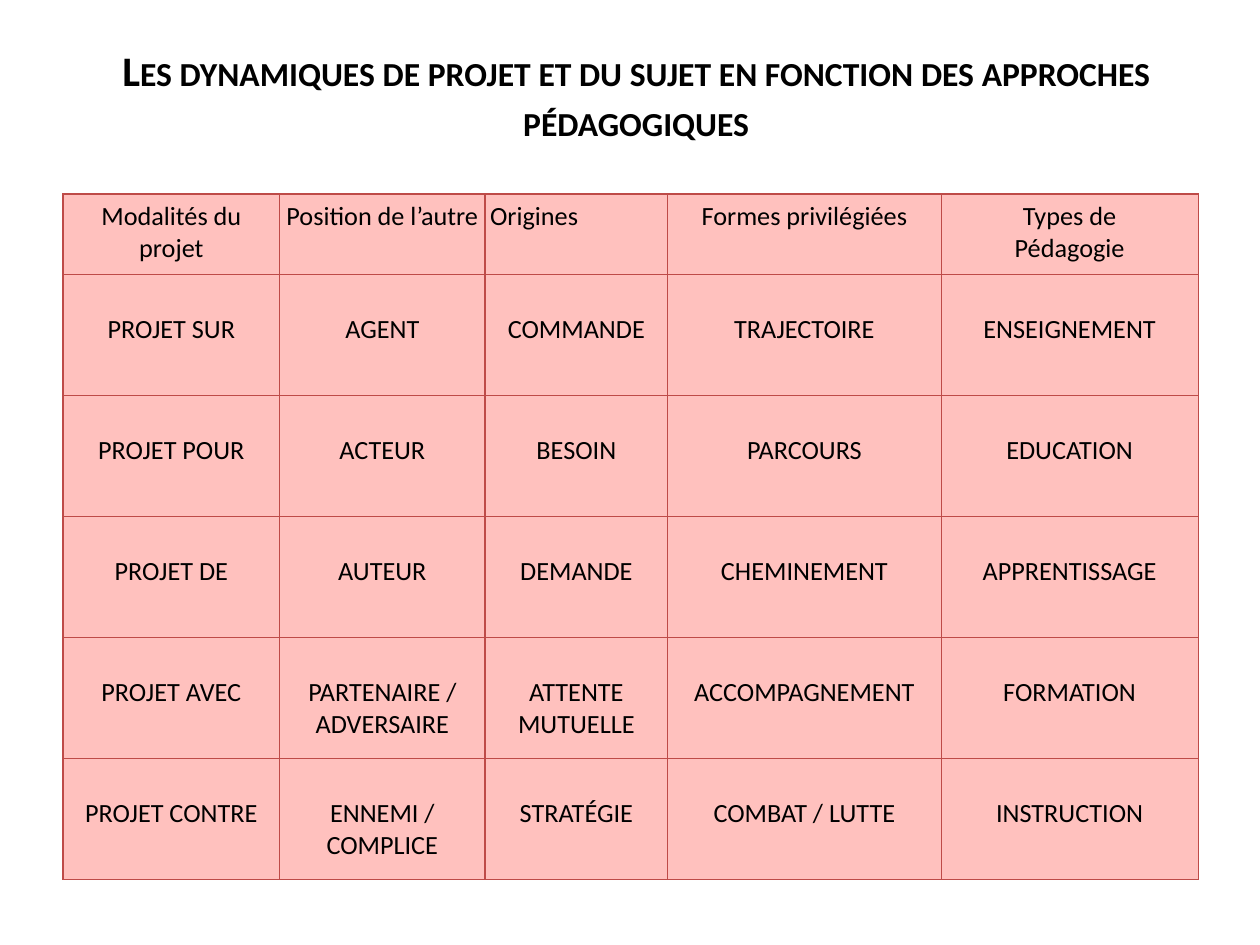
from dataclasses import dataclass

from lxml.etree import SubElement
from pptx import Presentation
from pptx.dml.color import RGBColor
from pptx.enum.text import MSO_ANCHOR, PP_ALIGN
from pptx.oxml.ns import qn
from pptx.util import Inches, Pt

BLACK = RGBColor(0x00, 0x00, 0x00)
PINK = RGBColor(0xFF, 0xC1, 0xBE)
RED = RGBColor(0xBE, 0x4B, 0x48)
FONT = "Calibri"
SLIDE_WIDTH, SLIDE_HEIGHT = Inches(10), Inches(7.5)

TITLE = "Les dynamiques de projet et du sujet en fonction des approches pédagogiques"


@dataclass(frozen=True)
class Column:
    width: float
    heading: str
    entries: tuple[str, ...]
    heading_align: PP_ALIGN = PP_ALIGN.CENTER


COLUMNS = (
    Column(1.72, "Modalités du projet",
           ("PROJET SUR", "PROJET POUR", "PROJET DE", "PROJET AVEC", "PROJET CONTRE")),
    Column(1.63, "Position de l’autre",
           ("AGENT", "ACTEUR", "AUTEUR", "PARTENAIRE / ADVERSAIRE", "ENNEMI / COMPLICE")),
    Column(1.45, "Origines",
           ("COMMANDE", "BESOIN", "DEMANDE", "ATTENTE\nMUTUELLE", "STRATÉGIE"),
           PP_ALIGN.LEFT),
    Column(2.17, "Formes privilégiées",
           ("TRAJECTOIRE", "PARCOURS", "CHEMINEMENT", "ACCOMPAGNEMENT", "COMBAT / LUTTE")),
    Column(2.04, "Types de\nPédagogie",
           ("ENSEIGNEMENT", "EDUCATION", "APPRENTISSAGE", "FORMATION", "INSTRUCTION")),
)
HEADING_HEIGHT, ENTRY_HEIGHT = 0.64, 0.96
HEADING_INSET, ENTRY_INSET = 0.05, 0.31


def style_text(frame, size: float, align: PP_ALIGN, bold: bool = False) -> None:
    for paragraph in frame.paragraphs:
        paragraph.alignment = align
        for run in paragraph.runs:
            run.font.name = FONT
            run.font.size = Pt(size)
            run.font.bold = bold
            run.font.color.rgb = BLACK


def add_title(slide) -> None:
    box = slide.shapes.add_textbox(
        int(SLIDE_WIDTH * 0.05), int(SLIDE_HEIGHT * 0.04),
        int(SLIDE_WIDTH * 0.91), int(SLIDE_HEIGHT * 0.12))
    frame = box.text_frame
    frame.word_wrap = True
    frame.vertical_anchor = MSO_ANCHOR.MIDDLE
    frame.text = TITLE
    style_text(frame, 24, PP_ALIGN.CENTER, bold=True)
    frame.paragraphs[0].runs[0].font._element.set("cap", "small")


def add_borders(cell) -> None:
    """Outline all four sides; borders must precede the fill in the XML."""
    properties = cell._tc.get_or_add_tcPr()
    for side in ("a:lnL", "a:lnR", "a:lnT", "a:lnB"):
        line = SubElement(properties, qn(side), w=str(Pt(0.75)))
        fill = SubElement(line, qn("a:solidFill"))
        SubElement(fill, qn("a:srgbClr"), val=str(RED))


def fill_cell(cell, text: str, align: PP_ALIGN, top_inset: float) -> None:
    add_borders(cell)
    cell.fill.solid()
    cell.fill.fore_color.rgb = PINK
    cell.margin_left = cell.margin_right = Inches(0.04)
    cell.margin_top, cell.margin_bottom = Inches(top_inset), Inches(0.05)
    cell.text_frame.text = text
    style_text(cell.text_frame, 15, align)


def add_approaches_table(slide) -> None:
    heights = [HEADING_HEIGHT] + [ENTRY_HEIGHT] * len(COLUMNS[0].entries)
    table = slide.shapes.add_table(
        len(heights), len(COLUMNS), int(SLIDE_WIDTH * 0.05), Inches(1.54),
        Inches(sum(column.width for column in COLUMNS)), Inches(sum(heights))).table
    table.first_row = table.horz_banding = False
    for row, height in zip(table.rows, heights):
        row.height = Inches(height)
    for index, column in enumerate(COLUMNS):
        table.columns[index].width = Inches(column.width)
        fill_cell(table.cell(0, index), column.heading, column.heading_align, HEADING_INSET)
        for row, entry in enumerate(column.entries, start=1):
            fill_cell(table.cell(row, index), entry, PP_ALIGN.CENTER, ENTRY_INSET)


def main() -> None:
    presentation = Presentation()
    presentation.slide_width, presentation.slide_height = SLIDE_WIDTH, SLIDE_HEIGHT
    slide = presentation.slides.add_slide(presentation.slide_layouts[6])
    add_title(slide)
    add_approaches_table(slide)
    presentation.save("out.pptx")


if __name__ == "__main__":
    main()
